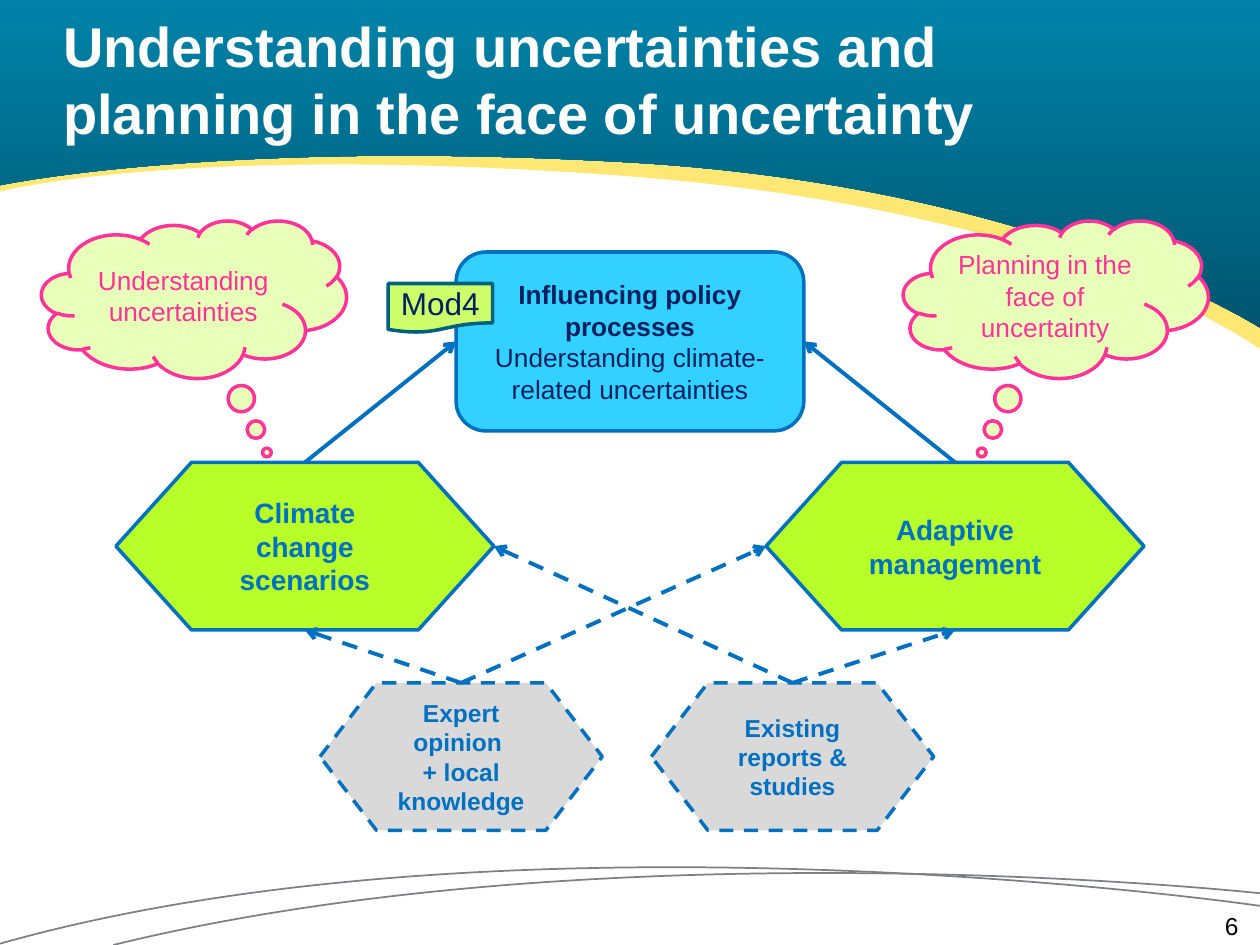
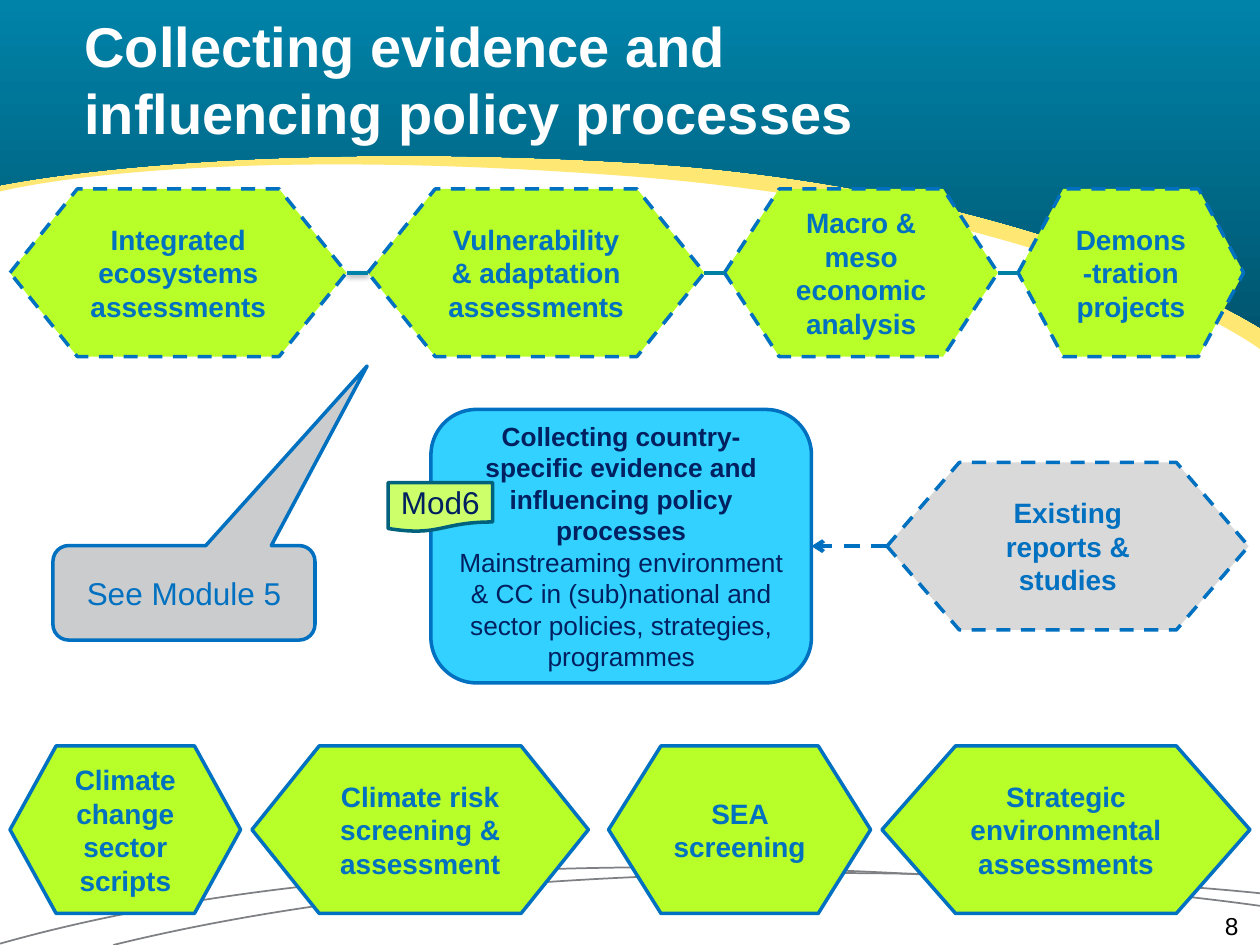
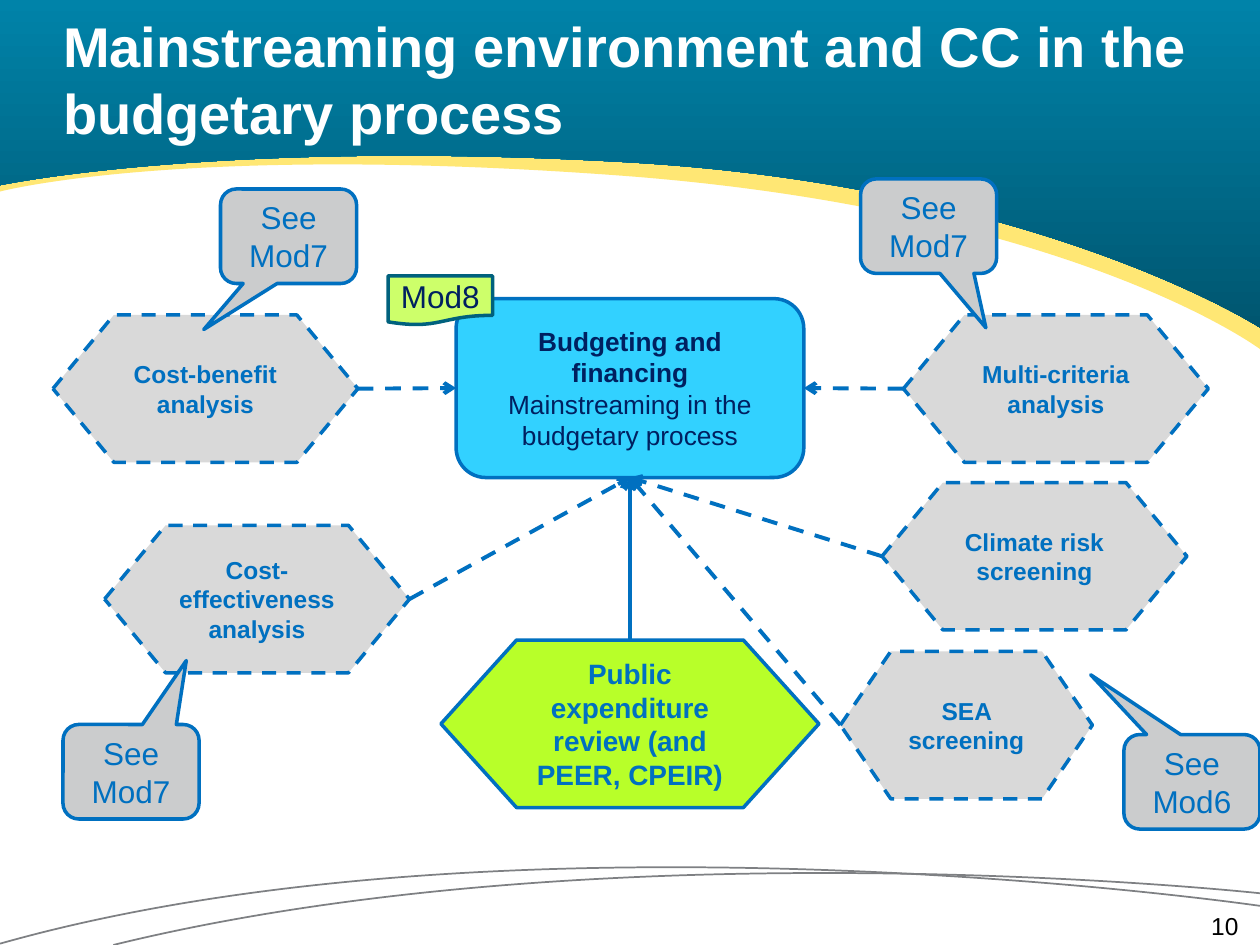
from dataclasses import dataclass, replace

from lxml import etree
from pptx import Presentation
from pptx import util as u
from pptx.dml.color import RGBColor
from pptx.enum import dml, shapes, text
from pptx.oxml.ns import qn
from pptx.shapes.autoshape import Shape
from pptx.slide import Slide, SlideLayout

PRESET = shapes.MSO_SHAPE
Point = tuple[float, float]


@dataclass(frozen=True)
class Theme:
    font: str = "Arial"
    title_size: int = 32
    number_size: int = 14
    white: str = "FFFFFF"
    black: str = "000000"
    band_top: str = "0083A9"
    band_bottom: str = "005670"
    band_edge: str = "FFE774"
    arc: str = "7E8083"
    blue: str = "0070C0"
    navy: str = "002060"
    joint: str = "0080A5"
    hub: str = "32D1FF"
    green: str = "B8FF29"
    grey: str = "D9D9D9"
    tag: str = "CDFF6A"
    tag_line: str = "00617D"
    note: str = "CBCCCD"
    cloud: str = "E7FFB8"
    pink: str = "FF3399"


THEME = Theme()


@dataclass(frozen=True)
class Style:
    preset: shapes.MSO_SHAPE
    fill: str
    line: str
    color: str
    size: int
    bold: bool = False
    dashed: bool = False
    wrap: bool = True


HUB = Style(PRESET.ROUNDED_RECTANGLE, THEME.hub, THEME.blue, THEME.navy, 15, bold=True)
TOOL = Style(PRESET.FLOWCHART_PREPARATION, THEME.green, THEME.blue, THEME.blue, 16, bold=True)
OPTION = replace(TOOL, dashed=True)
WIDE_SOURCE = replace(OPTION, fill=THEME.grey)
SOURCE = replace(WIDE_SOURCE, size=14)
TAG = Style(PRESET.FLOWCHART_DOCUMENT, THEME.tag, THEME.tag_line, THEME.navy, 18, wrap=False)
NOTE = Style(PRESET.ROUNDED_RECTANGULAR_CALLOUT, THEME.note, THEME.blue, THEME.blue, 18)
CLOUD = Style(PRESET.CLOUD_CALLOUT, THEME.cloud, THEME.pink, THEME.pink, 15)


@dataclass(frozen=True)
class Node:
    """A labelled shape; pointer is where a callout's tip lies."""
    style: Style
    left: float
    top: float
    width: float
    height: float
    label: str
    key: str = ""
    pointer: Point | None = None


TOP, LEFT, BOTTOM, RIGHT = range(4)


@dataclass(frozen=True)
class Link:
    """A line between the connection sites of two keyed nodes."""
    start: str
    start_side: int
    end: str
    end_side: int
    dashed: bool = True
    arrow: bool = True
    color: str = THEME.blue
    width: float = 2.25
    shadow: bool = False


@dataclass(frozen=True)
class Page:
    title: str
    number: int
    nodes: list[Node]
    links: list[Link]
    title_left: float = 0.5


def tool(left: float, top: float, label: str, key: str = "", width: float = 3,
         style: Style = TOOL) -> Node:
    return Node(style, left, top, width, 1.33, label, key)


def source(left: float, top: float, width: float, label: str, key: str) -> Node:
    return Node(SOURCE, left, top, width, 1.17, label, key)


def tag(top: float, label: str) -> Node:
    return Node(TAG, 3.08, top, 0.83, 0.39, label)


def note(left: float, top: float, label: str, pointer: Point, width: float = 1.08) -> Node:
    return Node(NOTE, left, top, width, 0.75, label, pointer=pointer)


def cloud(left: float, label: str, pointer: Point) -> Node:
    return Node(CLOUD, left, 1.75, 2.42, 1.25, label, pointer=pointer)


PAGES = [
    Page(
        "Understanding uncertainties and \vplanning in the face of uncertainty", 6,
        [
            Node(HUB, 3.62, 2, 2.76, 1.42,
                 "Influencing policy processes\nUnderstanding climate-related uncertainties", "hub"),
            tool(0.92, 3.67, "Climate change scenarios", "scenarios"),
            tool(6.08, 3.67, "Adaptive management", "adaptive"),
            tag(2.25, "Mod4"),
            source(5.17, 5.42, 2.24, "Existing reports & studies", "reports"),
            source(2.54, 5.42, 2.24, "Expert opinion \v+ local knowledge", "experts"),
            cloud(0.33, "Understanding uncertainties", (0.239, 0.973)),
            cloud(7.17, "Planning in the face of uncertainty", (-0.243, 0.973)),
        ],
        [
            Link("scenarios", TOP, "hub", LEFT, dashed=False),
            Link("adaptive", TOP, "hub", RIGHT, dashed=False),
            Link("reports", TOP, "adaptive", BOTTOM),
            Link("experts", TOP, "scenarios", BOTTOM),
            Link("experts", TOP, "adaptive", LEFT),
            Link("reports", TOP, "scenarios", RIGHT),
        ],
    ),
    Page(
        "Collecting evidence and \vinfluencing policy processes", 8,
        [
            Node(HUB, 3.42, 3.25, 3.02, 2.17,
                 "Collecting country-specific evidence and influencing policy processes\n"
                 "Mainstreaming environment & CC in (sub)national and sector policies, "
                 "strategies, programmes", "hub"),
            tag(3.83, "Mod6"),
            tool(7.04, 3.67, "Existing reports & studies", "reports", 2.87, WIDE_SOURCE),
            note(0.42, 4.33, "See Module 5", (0.699, -2.401), width=2.08),
            *(tool(left, 1.5, label, key, width, OPTION) for key, left, width, label in [
                ("ecosystems", 0.08, 2.67, "Integrated ecosystems assessments"),
                ("vulnerability", 2.92, 2.67, "Vulnerability & adaptation assessments"),
                ("economics", 5.75, 2.17, "Macro & meso economic analysis"),
                ("projects", 8.08, 1.79, "Demons-tration projects"),
            ]),
            *(tool(left, 5.92, label, width=width) for left, width, label in [
                (0.08, 1.83, "Climate change sector scripts"),
                (2, 2.67, "Climate risk screening & assessment"),
                (4.83, 2.08, "SEA screening"),
                (7, 2.92, "Strategic environmental assessments"),
            ]),
        ],
        [
            Link("reports", LEFT, "hub", RIGHT),
            Link("vulnerability", RIGHT, "economics", LEFT, False, False, THEME.joint),
            Link("economics", RIGHT, "projects", LEFT, False, False, THEME.joint),
            Link("vulnerability", LEFT, "ecosystems", RIGHT, False, False,
                 THEME.band_top, 2, shadow=True),
        ],
        title_left=0.67,
    ),
    Page(
        "Mainstreaming environment and CC in the\vbudgetary process", 10,
        [
            Node(HUB, 3.62, 2.37, 2.76, 1.42,
                 "Budgeting and financing\nMainstreaming in the budgetary process", "hub"),
            tool(3.5, 5.08, "Public expenditure review (and PEER, CPEIR)", "review"),
            tag(2.19, "Mod8"),
            source(0.42, 2.5, 2.42, "Cost-benefit analysis", "benefit"),
            source(0.83, 4.17, 2.42, "Cost-effectiveness analysis", "effectiveness"),
            source(7.17, 2.5, 2.42, "Multi-criteria analysis", "criteria"),
            source(7, 3.83, 2.42, "Climate risk screening", "risk"),
            source(6.67, 5.17, 2, "SEA screening", "sea"),
            note(0.5, 5.75, "See Mod7", (0.406, -1.177)),
            note(1.75, 1.5, "See Mod7", (-0.623, 0.987)),
            note(6.83, 1.42, "See Mod7", (0.421, 1.075)),
            note(8.92, 5.83, "See Mod6", (-0.744, -1.133)),
        ],
        [
            Link("review", TOP, "hub", BOTTOM, dashed=False),
            Link("benefit", RIGHT, "hub", LEFT),
            Link("effectiveness", RIGHT, "hub", BOTTOM),
            Link("criteria", LEFT, "hub", RIGHT),
            Link("risk", LEFT, "hub", BOTTOM),
            Link("sea", LEFT, "hub", BOTTOM),
        ],
    ),
]

ARCS = [
    [(10, 7.09), (10, 7.09), (4.85, 6.53), (0.9, 7.5)],
    [(10, 7.19), (10, 7.19), (4.1, 6.33), (0, 7.49)],
]
CORNERS = [(0, -0.01)] * 3 + [(10, -0.01)] * 3
EDGE = [(10, 2.77), (10, 2.77), (8.54, 1.68), (5.01, 1.4),
        (1.47, 1.13), (0, 1.52), (0, 1.52), *CORNERS]
BAND = [(10, 2.6), (10, 2.6), (8.26, 1.48), (5.01, 1.29),
        (1.75, 1.1), (0, 1.47), (0, 1.47), *CORNERS]


def rgb(color: str) -> RGBColor:
    return RGBColor.from_string(color)


def style_paragraph(paragraph, size: int, color: str, align, bold: bool = False) -> None:
    paragraph.alignment = align
    font = paragraph.font
    font.name, font.size, font.bold = THEME.font, u.Pt(size), bold
    font.color.rgb = rgb(color)


def clear_margins(frame) -> None:
    frame.margin_left = frame.margin_right = frame.margin_top = frame.margin_bottom = 0


def curved_outline(slide: Slide, points: list[Point], close: bool) -> Shape:
    """Join a start point and triples of cubic control points."""
    scaled = [(u.Inches(x), u.Inches(y)) for x, y in points]
    builder = slide.shapes.build_freeform(*scaled[0])
    builder.add_line_segments(scaled[1:], close=False)
    shape = builder.convert_to_shape()
    shape.shadow.inherit = False
    route = shape.element.find(".//" + qn("a:path"))
    segments = route.findall(qn("a:lnTo"))
    for first in range(0, len(segments), 3):
        curve = etree.SubElement(route, qn("a:cubicBezTo"))
        for segment in segments[first:first + 3]:
            curve.append(segment[0])
            route.remove(segment)
    if close:
        etree.SubElement(route, qn("a:close"))
    return shape


def decorate_layout(layout: SlideLayout, slide: Slide) -> None:
    """Draw the arcs and header band on a slide, then move them to its layout."""
    arcs = [curved_outline(slide, points, close=False) for points in ARCS]
    for arc in arcs:
        arc.fill.background()
        arc.line.color.rgb, arc.line.width = rgb(THEME.arc), u.Pt(1)

    edge, band = (curved_outline(slide, points, close=True) for points in (EDGE, BAND))
    edge.fill.solid()
    edge.fill.fore_color.rgb = rgb(THEME.band_edge)
    band.fill.gradient()
    band.fill.gradient_angle = 270
    for stop, color, position in zip(band.fill.gradient_stops,
                                     (THEME.band_top, THEME.band_bottom), (0, 1)):
        stop.color.rgb, stop.position = rgb(color), position
    for shape in (edge, band):
        shape.line.fill.background()
    for shape in (*arcs, edge, band):
        layout.shapes.element.append(shape.element)


def add_title(slide: Slide, page: Page) -> None:
    title = slide.shapes.title
    title.left, title.top = u.Inches(page.title_left), 0
    title.width, title.height = u.Inches(9.33), u.Inches(1.25)
    frame = title.text_frame
    frame.text = page.title
    frame.auto_size = text.MSO_AUTO_SIZE.NONE
    frame.vertical_anchor = text.MSO_ANCHOR.MIDDLE
    clear_margins(frame)
    style_paragraph(frame.paragraphs[0], THEME.title_size, THEME.white,
                    text.PP_ALIGN.LEFT, bold=True)


def add_number(slide: Slide, number: int) -> None:
    box = slide.shapes.add_textbox(u.Inches(7.5), u.Inches(7.23), u.Inches(2.33), u.Inches(0.18))
    frame = box.text_frame
    frame.text = str(number)
    frame.word_wrap = True
    clear_margins(frame)
    style_paragraph(frame.paragraphs[0], THEME.number_size, THEME.black, text.PP_ALIGN.RIGHT)


def add_node(slide: Slide, node: Node) -> Shape:
    style = node.style
    shape = slide.shapes.add_shape(style.preset, u.Inches(node.left), u.Inches(node.top),
                                   u.Inches(node.width), u.Inches(node.height))
    shape.shadow.inherit = False
    shape.fill.solid()
    shape.fill.fore_color.rgb = rgb(style.fill)
    shape.line.color.rgb, shape.line.width = rgb(style.line), u.Pt(2)
    if style.dashed:
        shape.line.dash_style = dml.MSO_LINE.DASH
    if node.pointer:
        shape.adjustments[0], shape.adjustments[1] = node.pointer
    frame = shape.text_frame
    frame.text = node.label
    frame.word_wrap = style.wrap
    frame.vertical_anchor = text.MSO_ANCHOR.MIDDLE
    for index, paragraph in enumerate(frame.paragraphs):
        style_paragraph(paragraph, style.size, style.color, text.PP_ALIGN.CENTER,
                        bold=style.bold and index == 0)
    return shape


def add_link(slide: Slide, link: Link, placed: dict[str, Shape]) -> None:
    connector = slide.shapes.add_connector(shapes.MSO_CONNECTOR.STRAIGHT, 0, 0, 0, 0)
    connector.begin_connect(placed[link.start], link.start_side)
    connector.end_connect(placed[link.end], link.end_side)
    line = connector.line
    line.color.rgb, line.width = rgb(link.color), u.Pt(link.width)
    if link.dashed:
        line.dash_style = dml.MSO_LINE.DASH
    properties = connector.element.spPr
    if link.arrow:
        etree.SubElement(properties.find(qn("a:ln")), qn("a:tailEnd"), type="arrow")
    if not link.shadow:
        etree.SubElement(properties, qn("a:effectLst"))


def main() -> None:
    deck = Presentation()
    deck.slide_width, deck.slide_height = u.Inches(10), u.Inches(7.5)
    layout = deck.slide_layouts.get_by_name("Title Only")
    for index, page in enumerate(PAGES):
        slide = deck.slides.add_slide(layout)
        if index == 0:
            decorate_layout(layout, slide)
        add_title(slide, page)
        placed = {node.key: add_node(slide, node) for node in page.nodes}
        for link in page.links:
            add_link(slide, link, placed)
        add_number(slide, page.number)
    deck.save("out.pptx")


if __name__ == "__main__":
    main()
